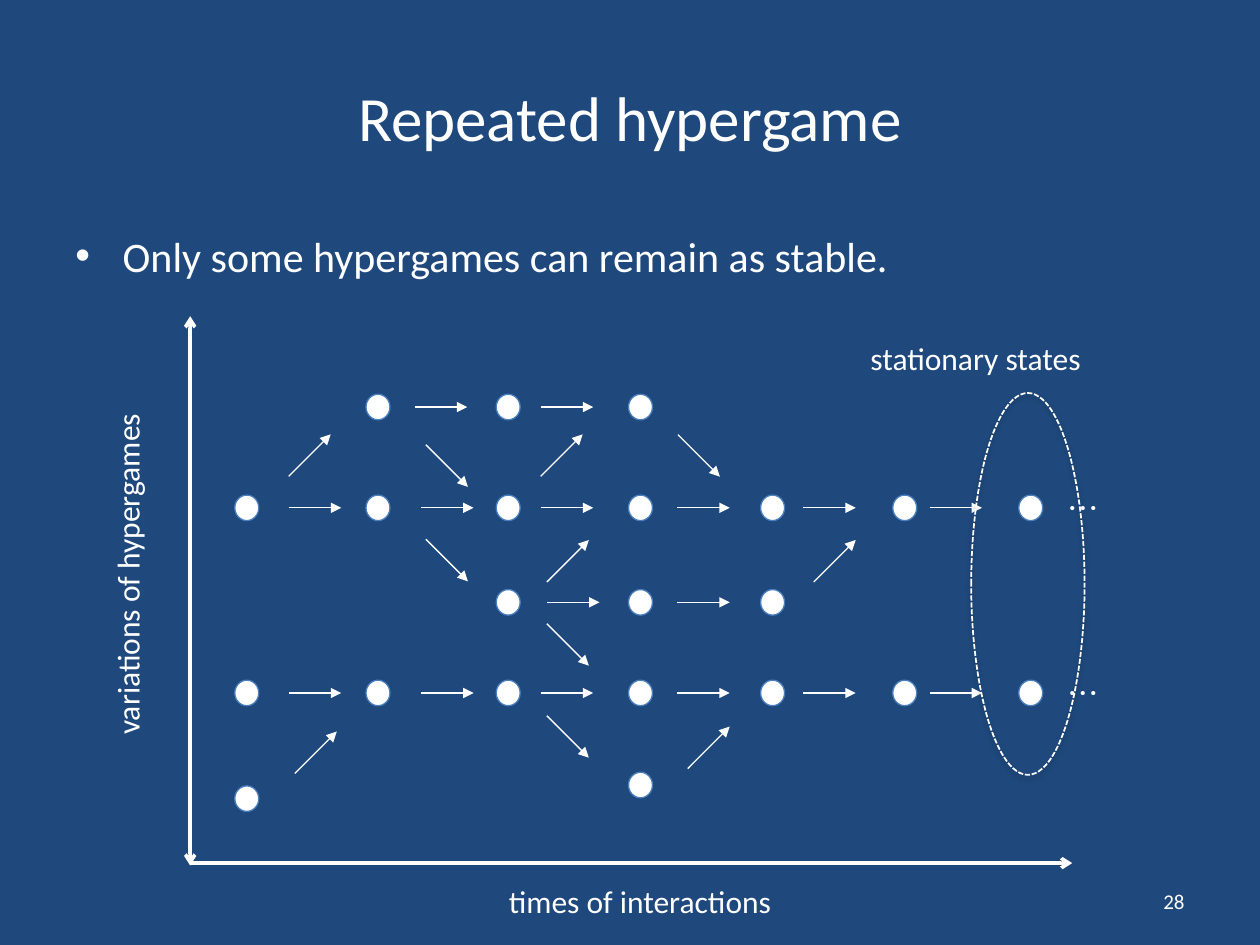
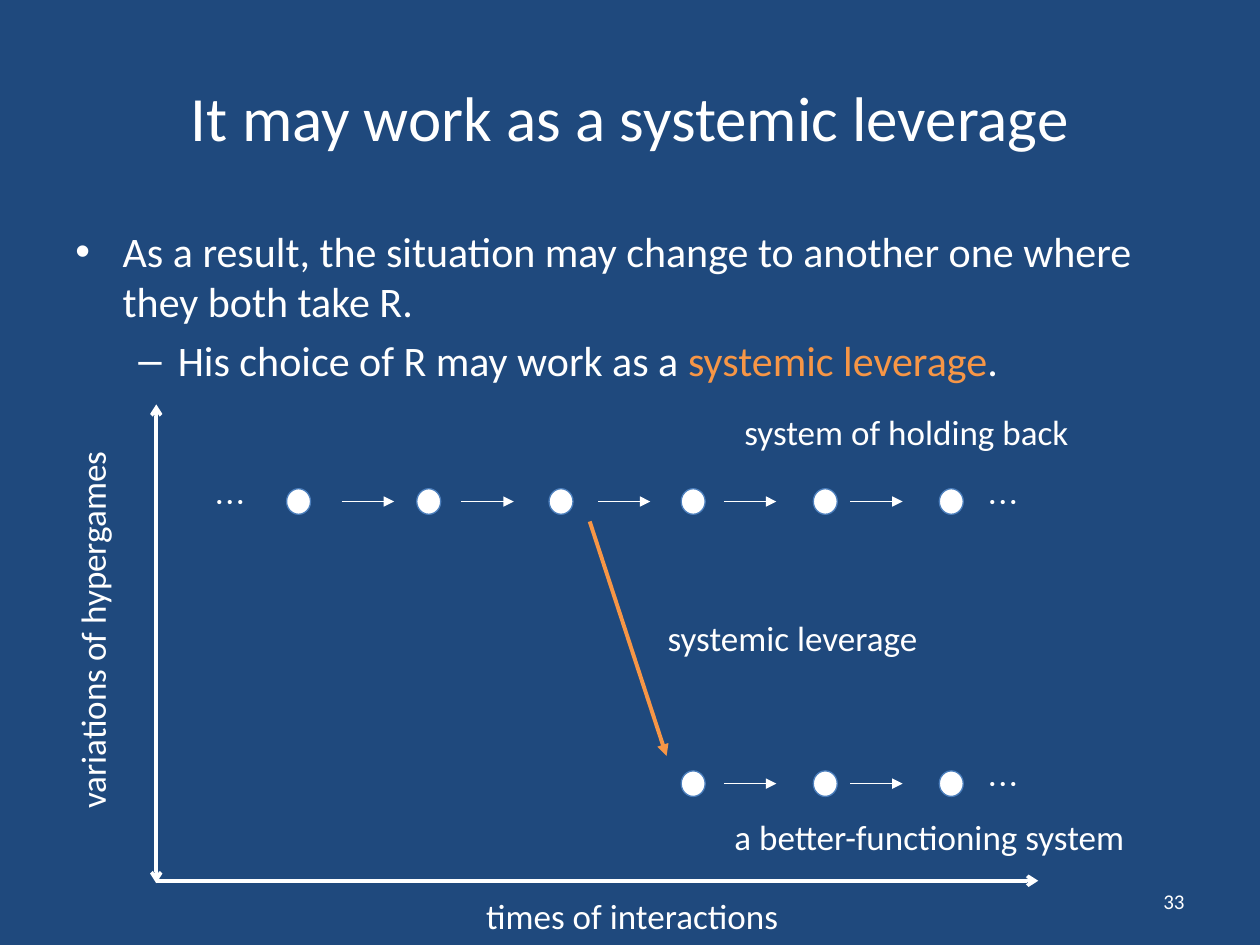
"""Builds two slides on how repeated hypergames move between states."""
from lxml import etree
from pptx import Presentation
from pptx.dml.color import RGBColor
from pptx.enum import dml, shapes, text
from pptx.oxml import ns
from pptx.util import Pt

WHITE, NAVY, BLUE, ORANGE = "FFFFFF", "1F497D", "4B7EBC", "F79646"
FONT, DOTFONT = "Calibri", "Noto Sans CJK JP"
DOT_W, DOT_H, STEP, RISE = 13.7, 14.6, 30, 24
AXIS = 504
COLS = (141, 216, 290.4, 366, 441.5, 517, 589)
STEMS = (165, 240.6, 309, 387, 459, 531.2)
BULLETS = (("•", 27, -27), ("–", 58.5, -22.5))

# rows: y, first column, last column, nudge of the first arrow
# labels: words, left, top, width
SLIDES = [
    dict(
        title="Repeated hypergame", page="28",
        body=(128, 660, [(0, [("Only some hypergames can remain as stable.", WHITE)])]),
        axes=(108.7, 493.2, 180.7), size=18, shift=0,
        across=("times of interactions", 283.7, 500.4, 166.3),
        up=("variations of hypergames", -26.6, 313.2, 198.7),
        rows=[(232.6, 1, 3, -3.6), (290.2, 0, 6, 0), (344.2, 2, 4, 3.6),
              (396, 0, 6, 0), (456.4, 0, 0, 0), (448.6, 3, 3, 0)],
        climbs=[(165, 272.2), (312.5, 332.6), (309, 272.2), (465, 332.6),
                (168.5, 442), (393, 439.2)],
        drops=[(243.4, 308.2), (387.4, 248.4), (243.4, 254.2),
               (312.5, 356.4), (312.5, 409)],
        labels=[("stationary states", 490.3, 190, 136)],
        ring=(555, 224.6, 64.8, 218.2)),
    dict(
        title="It may work as a systemic leverage", page="33",
        body=(125.3, 661.7, [
            (0, [("As a result, the situation may change to another one "
                  "where they both take R.", WHITE)]),
            (1, [("His choice of R may work as a ", WHITE),
                 ("systemic leverage", ORANGE), (".", WHITE)])]),
        axes=(89.3, 503.3, 231.1), size=20, shift=-45.4,
        across=("times of interactions", 270.7, 507.6, 183.6),
        up=("variations of hypergames", -57.6, 343.4, 220.3),
        rows=[(286.6, 1, 6, 0), (447.8, 4, 6, 0)],
        labels=[("system of holding back", 418.3, 231.1, 201.6),
                ("a better-functioning system", 412.6, 462.2, 241.2),
                ("systemic leverage", 374.4, 348.5, 163.4)],
        lead=(115.2, 286.6), lever=(337, 298, 380.9, 432)),
]


def rgb(code):
    """Turns a hex string into a colour."""
    return RGBColor.from_string(code)


def sub(node, tag, **attrs):
    """Adds a drawing element under a node."""
    return etree.SubElement(node, ns.qn("a:" + tag), attrs)


def style(para, size, color=WHITE, font=FONT):
    """Sets the font of a paragraph."""
    face = para.font
    face.name, face.size = font, Pt(size)
    face.color.rgb = rgb(color)


def box(slide, left, top, wide, high):
    """Adds an empty wrapping text box."""
    item = slide.shapes.add_textbox(Pt(left), Pt(top), Pt(wide), Pt(high))
    item.text_frame.word_wrap = True
    return item


def label(slide, words, left, top, wide, size, font=FONT):
    """Adds one line of text that sizes its own box."""
    item = box(slide, left, top, wide, size * 1.2 + 7.2)
    frame = item.text_frame
    frame.word_wrap = False
    frame.auto_size = text.MSO_AUTO_SIZE.SHAPE_TO_FIT_TEXT
    para = frame.paragraphs[0]
    run = para.add_run()
    run.text = words
    style(para, size, font=font)
    if font != FONT:
        run.font.name = font
        sub(run.font._element, "ea", typeface=font)
    return item


def dots(slide, left, mid):
    """Adds the sign that a row goes on."""
    label(slide, "…", left, mid - 14.4, 32.4, 18, DOTFONT)


def arrow(slide, x1, y1, x2, y2, wide=0.75, color=WHITE, tip="triangle", both=False):
    """Draws a line with a head at its end, or at both ends."""
    link = slide.shapes.add_connector(
        shapes.MSO_CONNECTOR.STRAIGHT, Pt(x1), Pt(y1), Pt(x2), Pt(y2))
    link.line.width = Pt(wide)
    link.line.color.rgb = rgb(color)
    props = link.element.spPr
    line = props.find(ns.qn("a:ln"))
    if both:
        sub(line, "headEnd", type=tip)
    sub(line, "tailEnd", type=tip)
    sub(props, "effectLst")


def oval(slide, left, top, wide, high):
    """Adds an ellipse without a shadow."""
    item = slide.shapes.add_shape(
        shapes.MSO_SHAPE.OVAL, Pt(left), Pt(top), Pt(wide), Pt(high))
    item.shadow.inherit = False
    return item


def ring(slide, *place):
    """Draws the dashed ring round the stationary states."""
    item = oval(slide, *place)
    item.fill.background()
    item.line.color.rgb = rgb(WHITE)
    item.line.width = Pt(1)
    item.line.dash_style = dml.MSO_LINE.SQUARE_DOT
    glow = item.element.spPr.find(ns.qn("a:effectLst"))
    shade = sub(glow, "outerShdw", blurRad=str(Pt(3.1)), dist=str(Pt(1.8)),
                dir="5400000", rotWithShape="0")
    sub(sub(shade, "srgbClr", val="000000"), "alpha", val="35000")


def row(slide, shift, mid, first, last, nudge):
    """Draws a row of states and the arrows between them."""
    for col in range(first, last + 1):
        state = oval(slide, COLS[col] + shift - DOT_W / 2, mid - DOT_H / 2, DOT_W, DOT_H)
        state.fill.solid()
        state.fill.fore_color.rgb = rgb(WHITE)
        state.line.color.rgb = rgb(BLUE)
        state.line.width = Pt(0.75)
    for col in range(first, last):
        left = STEMS[col] + shift + (nudge if col == first else 0)
        arrow(slide, left, mid, left + STEP, mid)
    if last == len(COLS) - 1:
        dots(slide, COLS[last] + shift + 13.7, mid)


def head(slide, words, page):
    """Fills the title and the page number."""
    title = slide.shapes.title
    title.left, title.top, title.width, title.height = map(Pt, (36, 21.6, 648, 90))
    num = box(slide, 516, 500.4, 168, 28.8)
    for item, line, size, side in ((title, words, 36, text.PP_ALIGN.CENTER),
                                   (num, page, 12, text.PP_ALIGN.RIGHT)):
        frame = item.text_frame
        frame.text = line
        frame.vertical_anchor = text.MSO_ANCHOR.MIDDLE
        frame.paragraphs[0].alignment = side
        style(frame.paragraphs[0], size)


def body(slide, top, wide, points):
    """Writes the bulleted points."""
    frame = box(slide, 36, top, wide, 372).text_frame
    for num, (level, runs) in enumerate(points):
        para = frame.add_paragraph() if num else frame.paragraphs[0]
        para.level = level
        para.space_before = Pt(4.8)
        style(para, 24)
        for words, color in runs:
            run = para.add_run()
            run.text = words
            run.font.color.rgb = rgb(color)
        sign, left, hang = BULLETS[level]
        props = para._p.get_or_add_pPr()
        props.set("marL", str(Pt(left)))
        props.set("indent", str(Pt(hang)))
        mark = sub(props, "buChar", char=sign)
        face = sub(props, "buFont", typeface="Arial")
        mark.addprevious(face)
        fonts = props.find(ns.qn("a:defRPr"))
        if fonts is not None:
            props.append(fonts)


def chart(slide, data):
    """Draws the axes, the states and their links."""
    left, base, top = data["axes"]
    size, shift = data["size"], data["shift"]
    arrow(slide, left, base + 1.4, left, top, 2, tip="arrow", both=True)
    arrow(slide, left, base, left + AXIS, base, 2, tip="arrow")
    label(slide, *data["across"], size)
    label(slide, *data["up"], size).rotation = 270
    for line in data["rows"]:
        row(slide, shift, *line)
    for key, rise in (("climbs", -RISE), ("drops", RISE)):
        for x, y in data.get(key, ()):
            arrow(slide, x, y, x + RISE, y + rise)
    for line in data["labels"]:
        label(slide, *line, size)
    if "ring" in data:
        ring(slide, *data["ring"])
    if "lead" in data:
        dots(slide, *data["lead"])
    if "lever" in data:
        arrow(slide, *data["lever"], 2.25, ORANGE)


def main():
    """Builds and saves the deck."""
    deck = Presentation()
    deck.slide_width, deck.slide_height = Pt(720), Pt(540)
    back = deck.slide_master.background.fill
    back.solid()
    back.fore_color.rgb = rgb(NAVY)
    for data in SLIDES:
        slide = deck.slides.add_slide(deck.slide_layouts[5])
        head(slide, data["title"], data["page"])
        body(slide, *data["body"])
        chart(slide, data)
    deck.save("out.pptx")


if __name__ == "__main__":
    main()
